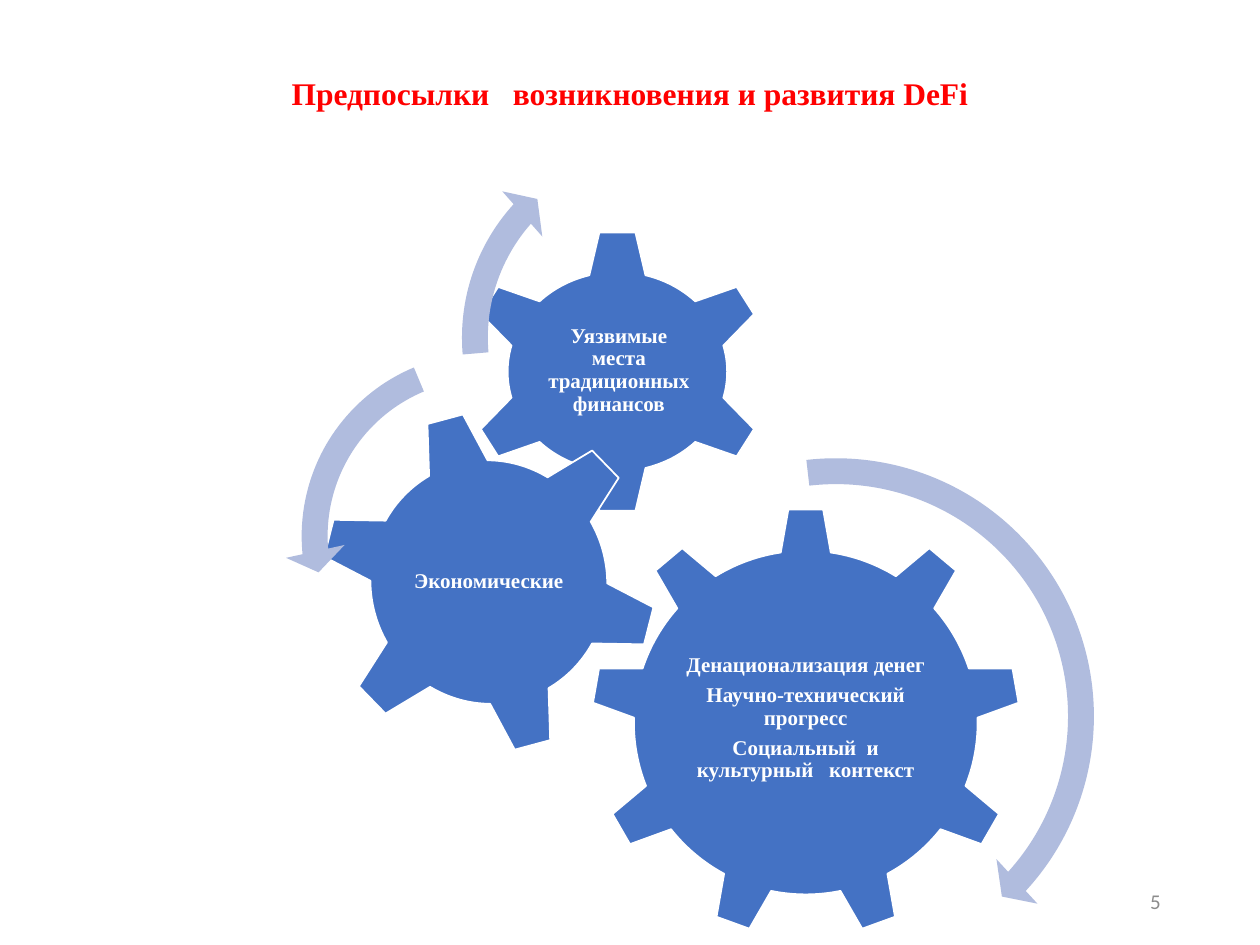
from pptx import Presentation
from pptx import util as u
from pptx.dml.color import RGBColor
from pptx.enum import shapes, text

BLUE = RGBColor(0x44, 0x72, 0xC4)
PALE = RGBColor(0xB0, 0xBC, 0xDE)
RED = RGBColor(0xFF, 0, 0)
GREY = RGBColor(0x8C, 0x8C, 0x8C)
WHITE = RGBColor(0xFF, 0xFF, 0xFF)

COLS, ROWS = 100, 75
CELL = u.Inches(10) // COLS
KIND = shapes.MSO_SHAPE
SERIF = "Times New Roman"

WHEELS = [
    (KIND.GEAR_9, (24.3, 30.6, 34.1, 34.1), 0, (0.2, 0.235, 0.6, 0.51),
     ["Денационализация денег", "Научно-технический прогресс",
      "Социальный  и культурный   контекст"]),
    (KIND.GEAR_6, (14.3, 8.5, 24.2, 22.6), 0, (0.25, 0.25, 0.51, 0.49),
     ["Уязвимые места традиционных финансов"]),
    (KIND.GEAR_6, (2.8, 22.8, 26.8, 27.4), 345, (0.22, 0.22, 0.56, 0.56),
     ["Экономические"]),
]
ARROWS = [
    (KIND.CIRCULAR_ARROW, (21.9, 25.3, 43.7, 43.7),
     (0.047, 2.99, 25.43, 158.05, 0.055)),
    (KIND.LEFT_CIRCULAR_ARROW, (0, 17, 31.7, 31.7),
     (0.065, 4.3, 104.89, 148.38, 0.075)),
    (KIND.CIRCULAR_ARROW, (12.7, 0, 34.2, 34.2),
     (0.06, 3.94, 133.14, 105.08, 0.07)),
]


def emu(box):
    """Turn a box in grid cells into slide lengths."""
    return [round(n * CELL) for n in box]


def shift(box, base):
    """Move a box by the corner of its base."""
    return box[0] + base[0], box[1] + base[1], box[2], box[3]


def part(box, share):
    """Give the part of a box that the shares name."""
    x, y, w, h = box
    return x + share[0] * w, y + share[1] * h, share[2] * w, share[3] * h


def label(slide, box, lines, size, color, face=SERIF, bold=True,
          align=text.PP_ALIGN.CENTER, pad=0.02, foot=0.02, after=0, lead=0.9):
    """Write centred lines of text in a box."""
    frame = slide.shapes.add_textbox(*emu(box)).text_frame
    frame.word_wrap = True
    frame.vertical_anchor = text.MSO_ANCHOR.MIDDLE
    frame.margin_left = frame.margin_right = frame.margin_top = u.Inches(pad)
    frame.margin_bottom = u.Inches(foot)
    frame.text = "\n".join(lines)
    for para in frame.paragraphs:
        para.alignment = align
        para.line_spacing = lead
        para.space_after = u.Pt(after)
        font = para.font
        font.name, font.size, font.bold = face, u.Pt(size), bold
        font.color.rgb = color


def form(slide, kind, box, fill):
    """Draw a plain filled shape in a box."""
    shape = slide.shapes.add_shape(kind, *emu(box))
    shape.shadow.inherit = False
    shape.fill.solid()
    shape.fill.fore_color.rgb = fill
    shape.line.fill.background()
    return shape


def gears(slide, box):
    """Place the gears, their words and the turning arrows."""
    for kind, place, turn, share, lines in WHEELS:
        spot = shift(place, box)
        wheel = form(slide, kind, spot, BLUE)
        wheel.rotation = turn
        wheel.line.color.rgb = WHITE
        wheel.line.width = u.Pt(1)
        label(slide, part(spot, share), lines, 12, WHITE, after=4.2)
    for kind, place, bends in ARROWS:
        arrow = form(slide, kind, shift(place, box), PALE)
        for i, bend in enumerate(bends):
            arrow.adjustments[i] = bend


def title(slide, box):
    """Write the heading in the upper part of its box."""
    label(slide, box, ["Предпосылки   возникновения и развития DeFi"],
          18, RED, pad=0.05, foot=0.79)


def number(slide, box):
    """Write the page number at the right of its box."""
    label(slide, box, ["5"], 12, GREY, "Calibri", False,
          text.PP_ALIGN.RIGHT, 0.1, 0.1, lead=1)


def main():
    """Build and save the slide."""
    deck = Presentation()
    deck.slide_width, deck.slide_height = COLS * CELL, ROWS * CELL
    slide = deck.slides.add_slide(deck.slide_layouts[6])
    title(slide, (6.9, 4, 86.2, 14.5))
    number(slide, (70.6, 69.5, 22.5, 4))
    gears(slide, (22.6, 9.7))
    deck.save("out.pptx")


if __name__ == "__main__":
    main()
